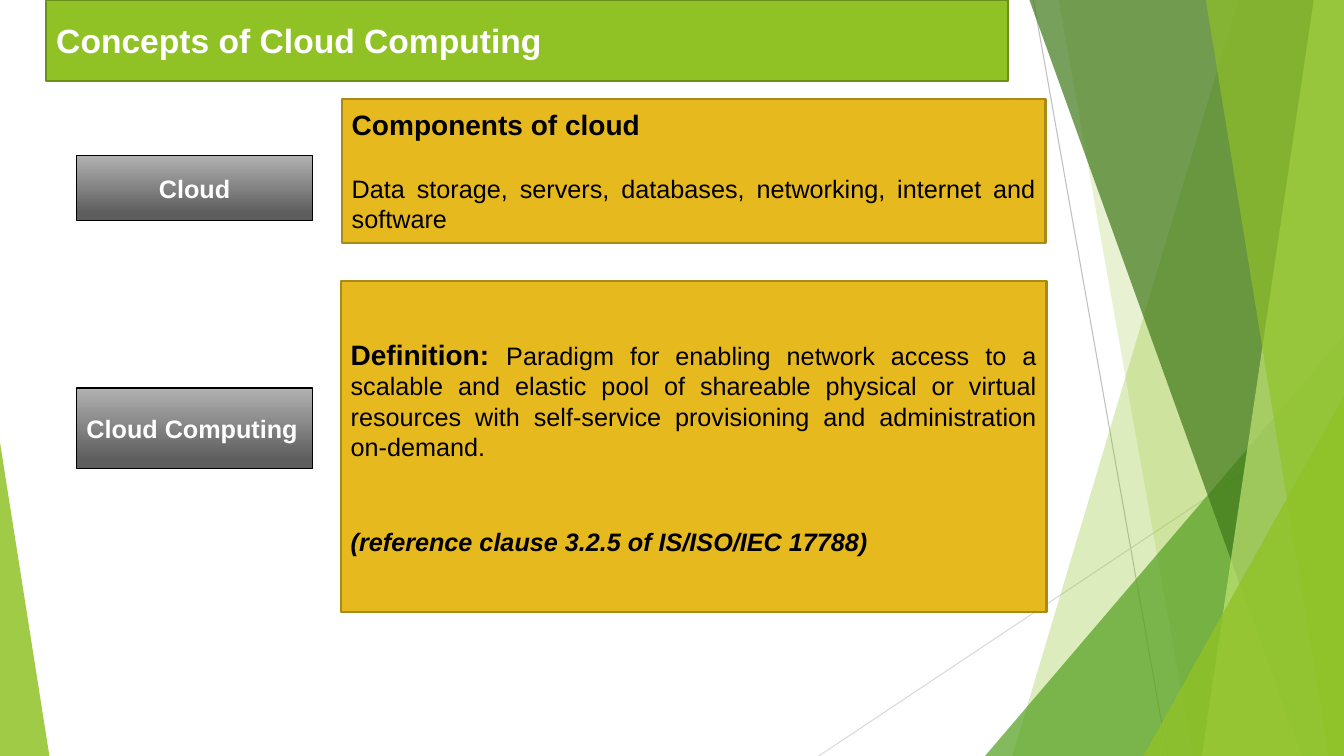
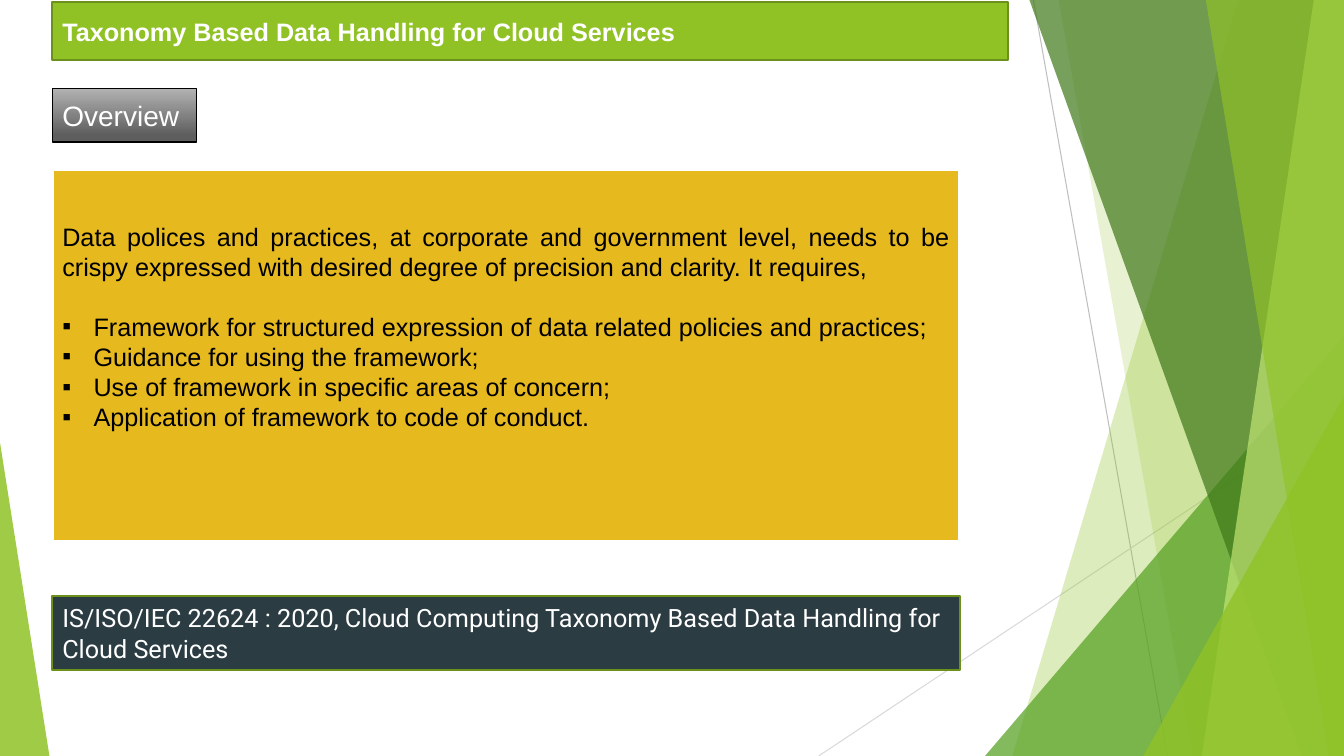
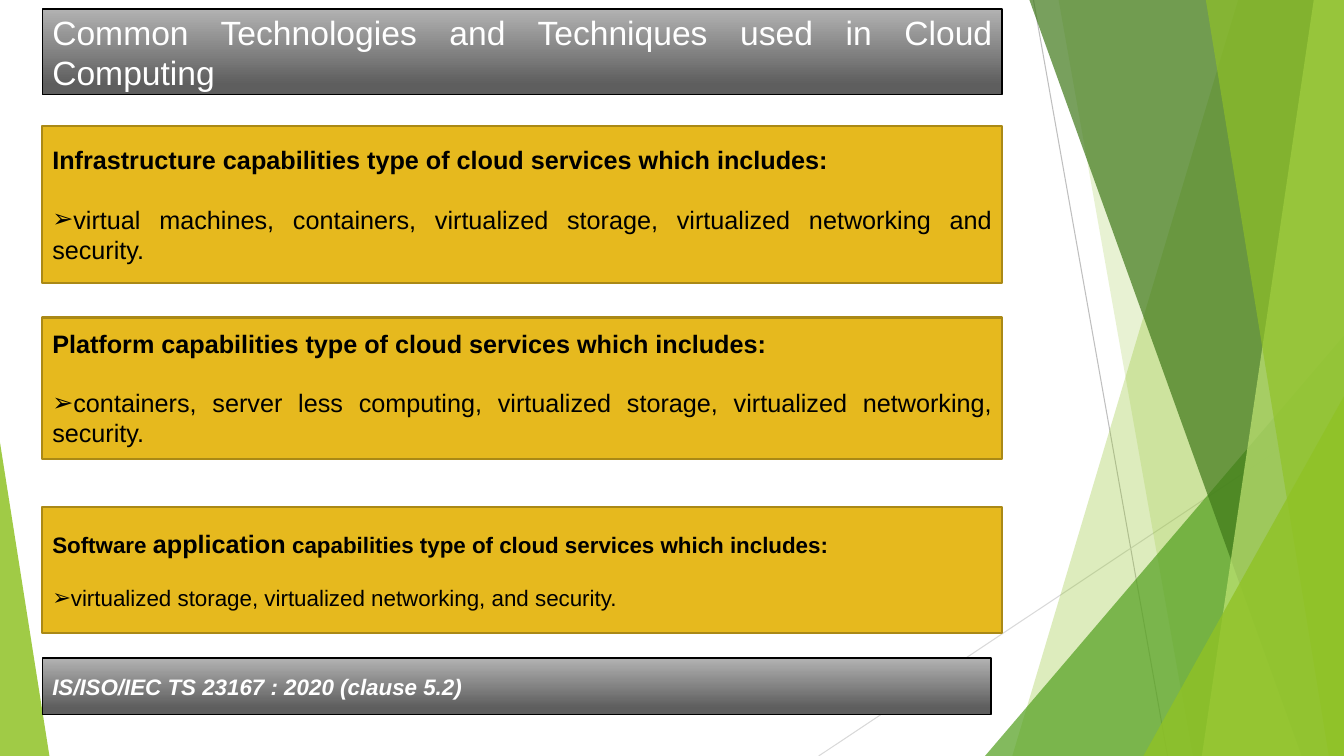
"""Build three slides on cloud computing concepts over a shared green facet backdrop."""
import lxml.etree
import pptx
import pptx.dml.color
import pptx.enum.shapes
import pptx.enum.text
import pptx.oxml.ns
import pptx.util

Inches = pptx.util.Inches
Pt = pptx.util.Pt
qn = pptx.oxml.ns.qn
SHAPE = pptx.enum.shapes.MSO_SHAPE
LEFT = pptx.enum.text.PP_ALIGN.LEFT
CENTER = pptx.enum.text.PP_ALIGN.CENTER
JUSTIFY = pptx.enum.text.PP_ALIGN.JUSTIFY

WIDTH, HEIGHT = 13.33, 7.5
GREEN = "90C226"
GREY = ("B2B2B2", "5E5E5E")
LOOKS = {
    "title": dict(fill=GREEN, line="6B901C", weight=1.5, text="FFFFFF", font="Arial"),
    "label": dict(fill=GREY, line="000000", weight=1, text="FFFFFF", font="Arial"),
    "panel": dict(fill="E6B91E", line="AA8916", weight=1.5, text="000000", font="Arial"),
    "overview": dict(fill="E6B91E", line="FFFFFF", weight=2, text="000000", font="Arial"),
    "standard": dict(fill="2C3C43", line="6B901C", weight=1.5, text="FFFFFF", font="Roboto"),
}


def color(code):
    return pptx.dml.color.RGBColor.from_string(code)


def add_box(slide, place, look, paragraphs, bottom=0.05):
    """Add a rectangle in one of the shared looks and fill it with paragraphs."""
    style = LOOKS[look]
    box = slide.shapes.add_shape(SHAPE.RECTANGLE, *map(Inches, place))
    box.shadow.inherit = False
    if style["fill"] == GREY:
        box.fill.gradient()
        box.fill.gradient_angle = 270
        for stop, code, position in zip(box.fill.gradient_stops, GREY, (0, 0.88)):
            stop.color.rgb = color(code)
            stop.position = position
    else:
        box.fill.solid()
        box.fill.fore_color.rgb = color(style["fill"])
    box.line.color.rgb = color(style["line"])
    box.line.width = Pt(style["weight"])
    frame = box.text_frame
    frame.word_wrap = True
    frame.margin_bottom = Inches(bottom)
    for index, item in enumerate(paragraphs):
        paragraph = frame.add_paragraph() if index else frame.paragraphs[0]
        paragraph.alignment = item.get("align", JUSTIFY)
        if "bullet" in item:
            properties = paragraph._p.get_or_add_pPr()
            indent = Inches(item.get("indent", 0))
            properties.set("marL", str(indent))
            properties.set("indent", str(-indent))
            lxml.etree.SubElement(properties, qn("a:buFont"), typeface="Arial")
            lxml.etree.SubElement(properties, qn("a:buChar"), char=item["bullet"])
        paragraph.space_before = Pt(item.get("before", 0))
        paragraph.font.name = style["font"]
        paragraph.font.color.rgb = color(style["text"])
        paragraph.font.italic = item.get("italic", False)
        if "runs" in item:
            for text, size, bold in item["runs"]:
                run = paragraph.add_run()
                run.text = text
                run.font.size = Pt(size)
                run.font.bold = bold
        else:
            paragraph.add_run().text = item["text"]
            paragraph.font.size = Pt(item.get("size", 18))
            paragraph.font.bold = item.get("bold", False)


presentation = pptx.Presentation()
presentation.slide_width = Inches(WIDTH)
presentation.slide_height = Inches(HEIGHT)
blank = presentation.slide_layouts[6]
for placeholder in list(blank.placeholders):
    blank.shapes.element.remove(placeholder.element)
concepts, taxonomy, technologies = [presentation.slides.add_slide(blank) for _ in range(3)]

backdrop = concepts.shapes.add_group_shape()
for start_x, start_y, end_x, end_y, code in [
    (10.25, 0, 11.58, HEIGHT, "BFBFBF"),
    (WIDTH, 4.03, 8.12, HEIGHT, "D9D9D9"),
]:
    ray = backdrop.shapes.add_connector(
        pptx.enum.shapes.MSO_CONNECTOR.STRAIGHT,
        *map(Inches, (start_x, start_y, end_x, end_y)))
    ray.line.color.rgb = color(code)
    ray.line.width = Pt(0.75)
    lxml.etree.SubElement(ray.element.spPr, qn("a:effectLst"))

for kind, first, second, code, opacity in [
    ("band", 12.28, 10.04, GREEN, 30),
    ("band", 10.5, 11.83, GREEN, 20),
    ("right", 9.77, 3.33, "54A021", 72),
    ("band", 10.21, 12.91, "3F7819", 70),
    ("band", 13.03, 11.92, "C0E474", 70),
    ("band", 11.96, 13.18, GREEN, 65),
    ("right", 11.34, 3.93, GREEN, 80),
    ("left", 0.49, 4.39, GREEN, 85),
]:
    if kind == "band":
        builder = backdrop.shapes.build_freeform(Inches(first), 0)
        corners = [(WIDTH, 0), (WIDTH, HEIGHT), (second, HEIGHT)]
        builder.add_line_segments([(Inches(x), Inches(y)) for x, y in corners])
        facet = builder.convert_to_shape()
    else:
        left, right = (first, WIDTH) if kind == "right" else (0, first)
        facet = backdrop.shapes.add_shape(
            SHAPE.ISOSCELES_TRIANGLE,
            *map(Inches, (left, second, right - left, HEIGHT - second)))
        facet.adjustments[0] = 1 if kind == "right" else 0
    facet.shadow.inherit = False
    facet.line.fill.background()
    facet.fill.solid()
    facet.fill.fore_color.rgb = color(code)
    tint = facet.element.spPr.find(qn("a:solidFill")).find(qn("a:srgbClr"))
    lxml.etree.SubElement(tint, qn("a:alpha"), val=str(opacity * 1000))
blank.shapes.element.append(backdrop.element)

add_box(concepts, (0.46, 0, 9.54, 0.8), "title", [
    dict(text="Concepts of Cloud Computing", size=24, bold=True, align=LEFT)])
add_box(concepts, (0.76, 1.54, 2.34, 0.65), "label", [
    dict(text="Cloud", bold=True, align=CENTER)])
add_box(concepts, (3.39, 0.98, 6.98, 1.43), "panel", [
    dict(text="Components of cloud", size=20, bold=True),
    dict(text="Data storage, servers, databases, networking, internet and software", before=23)])
add_box(concepts, (0.76, 3.85, 2.34, 0.8), "label", [
    dict(text="Cloud Computing", bold=True, align=LEFT)])
add_box(concepts, (3.38, 2.79, 7, 3.28), "panel", [
    dict(runs=[
        ("Definition: ", 20, True),
        ("Paradigm for enabling network access to a scalable and elastic pool of shareable "
         "physical or virtual resources with self-service provisioning and administration "
         "on-demand.", 18, False)]),
    dict(text="(reference clause 3.2.5 of IS/ISO/IEC 17788)", bold=True, italic=True, before=46)])

add_box(taxonomy, (0.52, 0.02, 9.48, 0.58), "title", [
    dict(text="Taxonomy Based Data Handling for Cloud Services", bold=True, align=LEFT)])
add_box(taxonomy, (0.52, 0.88, 1.43, 0.53), "label", [dict(text="Overview", size=20)])
requirements = [
    "Framework for structured expression of data related policies and practices;",
    "Guidance for using the framework;",
    "Use of framework in specific areas of concern;",
    "Application of framework to code of conduct.",
]
add_box(taxonomy, (0.52, 1.68, 9, 3.69), "overview", [
    dict(text="Data polices and practices, at corporate and government level, needs to be crispy "
              "expressed with desired degree of precision and clarity. It requires,"),
    *[dict(text=text, bullet="▪", indent=0.31, before=0 if index else 20.7)
      for index, text in enumerate(requirements)]], bottom=0.62)
add_box(taxonomy, (0.52, 5.91, 9, 0.74), "standard", [
    dict(text="IS/ISO/IEC 22624 : 2020, Cloud Computing Taxonomy Based Data Handling for "
              "Cloud Services", align=LEFT)])

add_box(technologies, (0.42, 0.09, 9.52, 0.85), "label", [
    dict(text="Common Technologies and Techniques used in Cloud Computing", size=24)])
ending = " capabilities type of cloud services which includes:"
for top, height, size, heading, services in [
    (1.25, 1.56, 18, [("Infrastructure" + ending, 18, True)],
     "virtual machines, containers, virtualized storage, virtualized networking and security."),
    (3.15, 1.4, 18, [("Platform" + ending, 18, True)],
     "containers, server less computing, virtualized storage, virtualized networking, security."),
    (5.03, 1.25, 16,
     [("Software ", 16, True), ("application", 18, True), (ending, 16, True)],
     "virtualized storage, virtualized networking, and security."),
]:
    add_box(technologies, (0.42, top, 9.52, height), "panel", [
        dict(runs=heading),
        dict(text=services, size=size, bullet="➢", before=size * 1.15)])
add_box(technologies, (0.42, 6.53, 9.41, 0.56), "label", [
    dict(text="IS/ISO/IEC TS 23167 : 2020 (clause 5.2)", size=16, bold=True, italic=True)])

presentation.save("out.pptx")
